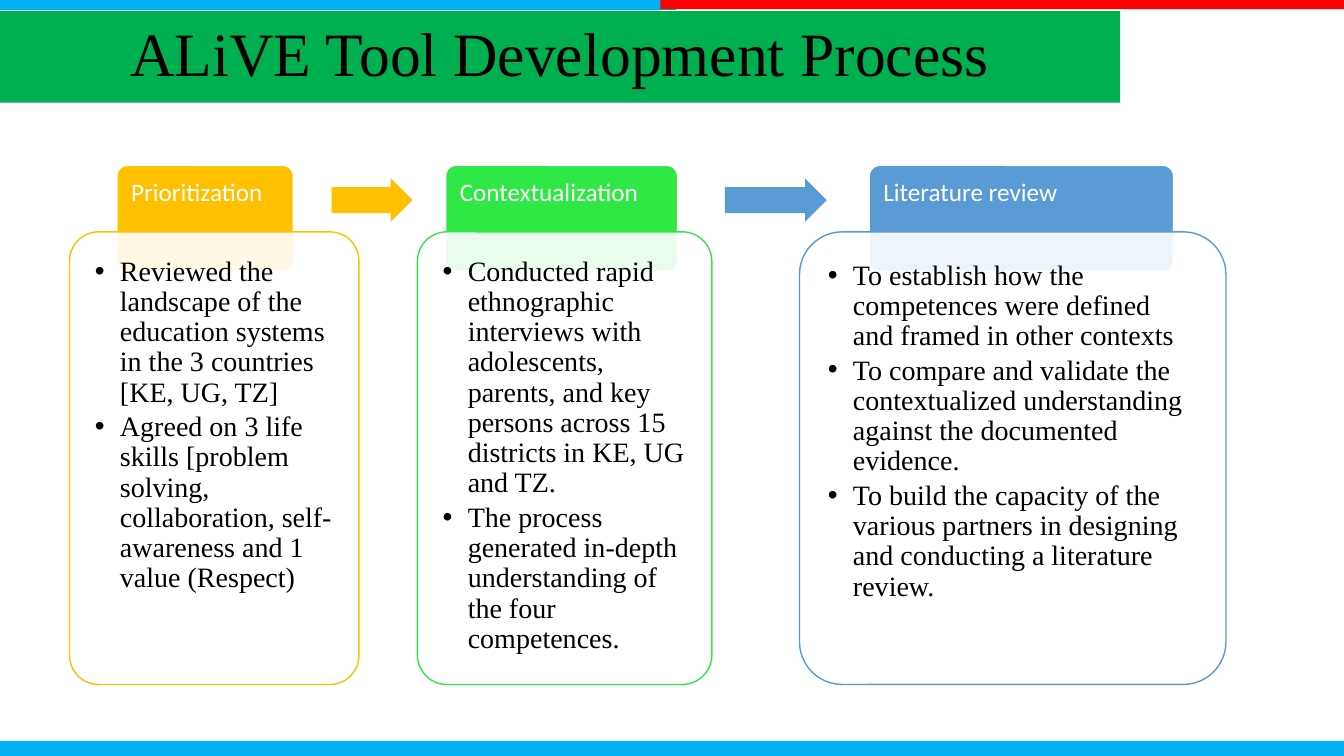
from lxml import etree
from pptx import Presentation
from pptx.dml.color import RGBColor
from pptx.enum.shapes import MSO_SHAPE
from pptx.enum.text import MSO_ANCHOR, PP_ALIGN
from pptx.oxml.ns import qn
from pptx.util import Pt

PX = 9144  # 100 px to the inch
RECTANGLE = MSO_SHAPE.RECTANGLE
ROUNDED = MSO_SHAPE.ROUNDED_RECTANGLE
ARROW = MSO_SHAPE.RIGHT_ARROW
TOP, MIDDLE = MSO_ANCHOR.TOP, MSO_ANCHOR.MIDDLE
LEFT, CENTER = PP_ALIGN.LEFT, PP_ALIGN.CENTER
COLORS = {
    "sky": "00B0F0", "red": "FF0000", "green": "00B050", "amber": "FFC000",
    "lime": "30E845", "blue": "5B9BD5", "white": "FFFFFF", "black": "000000",
}

presentation = Presentation()
presentation.slide_width = 1333 * PX
presentation.slide_height = 750 * PX
slide = presentation.slides.add_slide(presentation.slide_layouts[6])


def add_shape(kind, left, top, width, height, fill, line=None, adjustments=()):
    shape = slide.shapes.add_shape(kind, left * PX, top * PX, width * PX, height * PX)
    shape.shadow.inherit = False
    shape.fill.solid()
    shape.fill.fore_color.rgb = RGBColor.from_string(COLORS[fill])
    if line:
        shape.line.color.rgb = RGBColor.from_string(COLORS[line])
        shape.line.width = Pt(1)
    else:
        shape.line.fill.background()
    for index, value in enumerate(adjustments):
        shape.adjustments[index] = value
    return shape


def write_text(shape, texts, size, font, color, insets, align=LEFT, anchor=TOP,
               space_after=0, bullet=False):
    frame = shape.text_frame
    frame.word_wrap = True
    frame.vertical_anchor = anchor
    frame.margin_left, frame.margin_top, frame.margin_right, frame.margin_bottom = [
        inset * PX for inset in insets]
    for index, text in enumerate(texts):
        paragraph = frame.add_paragraph() if index else frame.paragraphs[0]
        if bullet:
            properties = paragraph._p.get_or_add_pPr()
            properties.set("marL", str(25 * PX))
            properties.set("indent", str(-25 * PX))
            etree.SubElement(properties, qn("a:buFont"), typeface="Arial")
            etree.SubElement(properties, qn("a:buChar"), char="•")
        paragraph.alignment = align
        paragraph.line_spacing = 0.9
        paragraph.space_after = Pt(space_after)
        run = paragraph.add_run()
        run.text = text
        run.font.size = Pt(size)
        run.font.name = font
        run.font.color.rgb = RGBColor.from_string(COLORS[color])


# Bands along the slide edges
add_shape(RECTANGLE, 0, -12, 671, 22, "sky")
add_shape(RECTANGLE, 655, -12, 678, 21, "red")
add_shape(RECTANGLE, 0, 735, 1333, 15, "sky")

# Title
title = add_shape(RECTANGLE, 0, 11, 1111, 91, "green")
write_text(title, ["ALiVE Tool Development Process"], 44, "Times New Roman", "black",
           (10, 5, 10, 5), align=CENTER, anchor=MIDDLE)

# Stages: heading, colour, tab (left, width), card (left, width),
# text inset (x, y), arrow to the next stage (left, width), bullets
stages = [
    ("Prioritization", "amber", (116, 175), (69, 287), (9, 9), (329, 80), [
        "Reviewed the landscape of the education systems in the 3 countries [KE, UG, TZ]",
        "Agreed on 3 life skills [problem solving, collaboration, self-awareness "
        "and 1 value (Respect)",
    ]),
    ("Contextualization", "lime", (442, 230), (414, 292), (9, 9), (719, 101), [
        "Conducted rapid ethnographic interviews with adolescents, parents, and key "
        "persons across 15 districts in KE, UG and TZ.",
        "The process generated in-depth understanding of the four competences.",
    ]),
    ("Literature review", "blue", (862, 302), (793, 423), (12, 13), None, [
        "To establish how the competences were defined and framed in other contexts",
        "To compare and validate the contextualized understanding against the "
        "documented evidence.",
        "To build the capacity of the various partners in designing and conducting "
        "a literature review.",
    ]),
]
arrow_colors = ["amber", "blue"]
CARD_TOP, CARD_HEIGHT = 230, 449

for number, (heading, color, tab, card, inset, arrow, bullets) in enumerate(stages):
    tab_left, tab_width = tab
    card_left, card_width = card
    inset_x, inset_y = inset

    # Tab with its heading
    add_shape(ROUNDED, tab_left, 164, tab_width, 105, color, "white", [0.1])
    heading_box = slide.shapes.add_textbox(tab_left * PX, 164 * PX, tab_width * PX, 70 * PX)
    write_text(heading_box, [heading], 18, "Calibri", "white", (14, 14, 14, 7))

    # Slightly see-through card over the tab
    panel = add_shape(ROUNDED, card_left, CARD_TOP, card_width, CARD_HEIGHT,
                      "white", color, [0.1])
    panel_color = panel._element.spPr.find(qn("a:solidFill"))[0]
    etree.SubElement(panel_color, qn("a:alpha"), val="90000")

    # Bullets
    bullet_box = slide.shapes.add_textbox(
        (card_left + inset_x) * PX, (CARD_TOP + inset_y) * PX,
        (card_width - 2 * inset_x) * PX, (CARD_HEIGHT - 2 * inset_y) * PX)
    write_text(bullet_box, bullets, 20, "Times New Roman", "black", (16, 16, 16, 16),
               space_after=3, bullet=True)

    # Arrow to the next stage
    if arrow:
        add_shape(ARROW, arrow[0], 177, arrow[1], 43, arrow_colors[number],
                  adjustments=[0.6, 0.5])

presentation.save("out.pptx")
